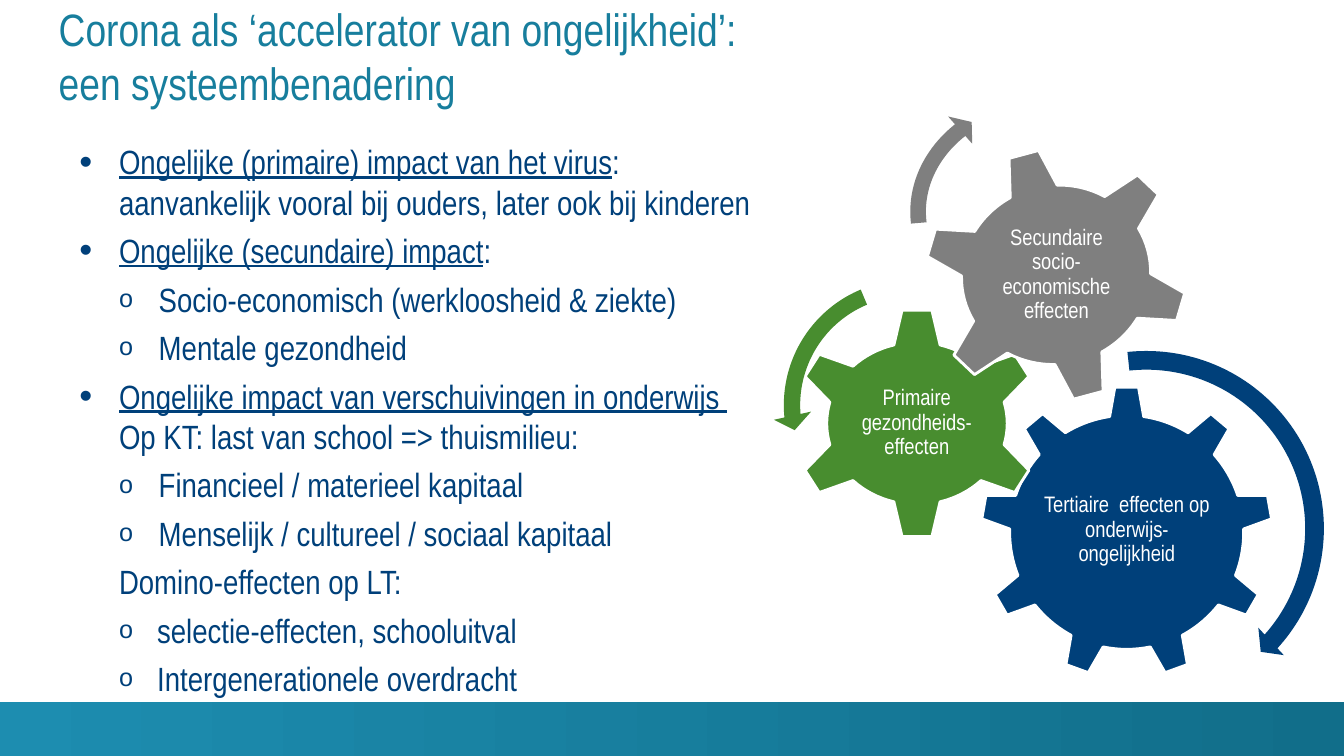
from lxml import etree
from pptx import Presentation
from pptx.dml.color import RGBColor
from pptx.enum.shapes import MSO_SHAPE
from pptx.enum.text import MSO_ANCHOR, MSO_AUTO_SIZE, PP_ALIGN
from pptx.oxml.ns import qn
from pptx.util import Cm, Pt

RECT = MSO_SHAPE.RECTANGLE
GEAR6, GEAR9 = MSO_SHAPE.GEAR_6, MSO_SHAPE.GEAR_9
ARC, LEFTARC = MSO_SHAPE.CIRCULAR_ARROW, MSO_SHAPE.LEFT_CIRCULAR_ARROW
TOP, MIDDLE, BOTTOM = MSO_ANCHOR.TOP, MSO_ANCHOR.MIDDLE, MSO_ANCHOR.BOTTOM
LEFT, CENTER = PP_ALIGN.LEFT, PP_ALIGN.CENTER
NOFIT = MSO_AUTO_SIZE.NONE

FACE = "Arial Narrow"
NAVY, GREEN, GREY, WHITE = "00407A", "488D2F", "7F7F7F", "FFFFFF"
TEAL, LIGHT, DARK = "177E9D", "1D8DB0", "116E8A"

DOT = ("•", 110, 1, 1)
RING = ("o", 75, 2, 1)
NEAR = ("o", 75, 1.96, 0.96)
PLAIN = (None, 0, 1, 0)

POINTS = [
    (DOT, [("Ongelijke (primaire) impact van het virus", True),
           (": \naanvankelijk vooral bij ouders, later ook bij kinderen", False)]),
    (DOT, [("Ongelijke (secundaire) impact", True), (":", False)]),
    (RING, [("Socio-economisch (werkloosheid & ziekte)", False)]),
    (RING, [("Mentale gezondheid", False)]),
    (DOT, [("Ongelijke impact van verschuivingen in onderwijs \n", True),
           ("Op KT: last van school => thuismilieu:", False)]),
    (RING, [("Financieel / materieel kapitaal", False)]),
    (RING, [("Menselijk / cultureel / sociaal kapitaal", False)]),
    (PLAIN, [("Domino-effecten op LT:", False)]),
    (NEAR, [("selectie-effecten, schooluitval", False)]),
    (NEAR, [("Intergenerationele overdracht", False)]),
]

GEARS = [
    (GEAR9, NAVY, 0, (5.23, 7.67, 7.37, 7.37), (6.71, 9.4, 4.42, 3.78),
     "Tertiaire  effecten op onderwijs-ongelijkheid"),
    (GEAR6, GREEN, 0, (0.48, 5.69, 6.3, 5.84), (2.01, 7.16, 3.23, 2.87),
     "Primaire gezondheids-effecten"),
    (GEAR6, GREY, 345, (3.78, 1.65, 6.71, 6.43), (5.28, 3.05, 3.73, 3.63),
     "Secundaire socio-economische effecten"),
]

ARROWS = [
    (ARC, NAVY, (4.7, 6.55, 9.42, 9.42), (0.05, 2.99, 25.29, 158.33, 0.05)),
    (LEFTARC, GREEN, (0, 4.72, 6.86, 6.86), (0.06, 4.3, 104.89, 148.38, 0.07)),
    (ARC, GREY, (3.2, 0, 7.62, 6.55), (0.06, 3.94, 133.14, 105.08, 0.07)),
]


def color(code):
    return RGBColor.from_string(code)


def write(para, text, size, code, under=False):
    for i, part in enumerate(text.split("\n")):
        if i:
            para.add_line_break()
            etree.SubElement(para._p[-1], qn("a:rPr"), sz=str(round(size * 100)))
        if part:
            run = para.add_run()
            run.text = part
            run.font.name = FACE
            run.font.size = Pt(size)
            run.font.color.rgb = color(code)
            run.font.underline = under


def frame(shape, anchor, inset=0):
    text = shape.text_frame
    text.word_wrap = True
    text.auto_size = NOFIT
    text.vertical_anchor = anchor
    text.margin_left = text.margin_right = Cm(inset)
    text.margin_top = text.margin_bottom = Cm(inset)
    return text


def place(shape, box):
    shape.left, shape.top, shape.width, shape.height = map(Cm, box)


def draw(slide, kind, box):
    shape = slide.shapes.add_shape(kind, *map(Cm, box))
    shape.shadow.inherit = False
    shape.line.fill.background()
    return shape


def shift(box, x, y):
    left, top, wide, high = box
    return x + left, y + top, wide, high


def bullet(para, mark, scale, indent, hang):
    props = para._p.get_or_add_pPr()
    props.set("marL", str(Cm(indent)))
    props.set("indent", str(-Cm(hang)))
    if mark is None:
        etree.SubElement(props, qn("a:buNone"))
        return
    etree.SubElement(props, qn("a:buSzPct"), val=str(scale * 1000))
    etree.SubElement(props, qn("a:buFont"), typeface="Arial")
    etree.SubElement(props, qn("a:buChar"), char=mark)


def footer(slide, box):
    bar = draw(slide, RECT, box)
    bar.fill.gradient()
    bar.fill.gradient_angle = 0
    for stop, code in zip(bar.fill.gradient_stops, (LIGHT, DARK)):
        stop.color.rgb = color(code)


def title(slide, box):
    shape = slide.shapes.title
    place(shape, box)
    para = frame(shape, BOTTOM).paragraphs[0]
    para.alignment = LEFT
    write(para, "Corona als ‘accelerator van ongelijkheid’:\neen systeembenadering",
          32.4, TEAL)


def body(slide, box):
    shape = slide.placeholders[1]
    place(shape, box)
    text = frame(shape, TOP)
    for i, (style, runs) in enumerate(POINTS):
        para = text.add_paragraph() if i else text.paragraphs[0]
        para.level = 0 if style is DOT else 1
        bullet(para, *style)
        para.alignment = LEFT
        para.space_before = Pt(5.8 if i else 0)
        for words, under in runs:
            write(para, words, 24, NAVY, under)


def gears(slide, x, y):
    for kind, code, turn, box, label, words in GEARS:
        gear = draw(slide, kind, shift(box, x, y))
        gear.rotation = turn
        gear.fill.solid()
        gear.fill.fore_color.rgb = color(code)
        gear.line.color.rgb = color(WHITE)
        gear.line.width = Pt(2)
        note = slide.shapes.add_textbox(*map(Cm, shift(label, x, y)))
        para = frame(note, MIDDLE, 0.05).paragraphs[0]
        para.alignment = CENTER
        para.line_spacing = 0.9
        write(para, words, 16, WHITE)
    for kind, code, box, bends in ARROWS:
        arrow = draw(slide, kind, shift(box, x, y))
        arrow.fill.solid()
        arrow.fill.fore_color.rgb = color(code)
        for i, bend in enumerate(bends):
            arrow.adjustments[i] = bend


def main():
    deck = Presentation()
    deck.slide_width, deck.slide_height = Cm(33.87), Cm(19.05)
    slide = deck.slides.add_slide(deck.slide_layouts[1])
    footer(slide, (0, 17.7, 33.87, 1.35))
    title(slide, (1.48, 0.28, 30.86, 2.49))
    body(slide, (2, 3.56, 17.93, 13.97))
    gears(slide, 19.48, 2.06)
    deck.save("out.pptx")


if __name__ == "__main__":
    main()
